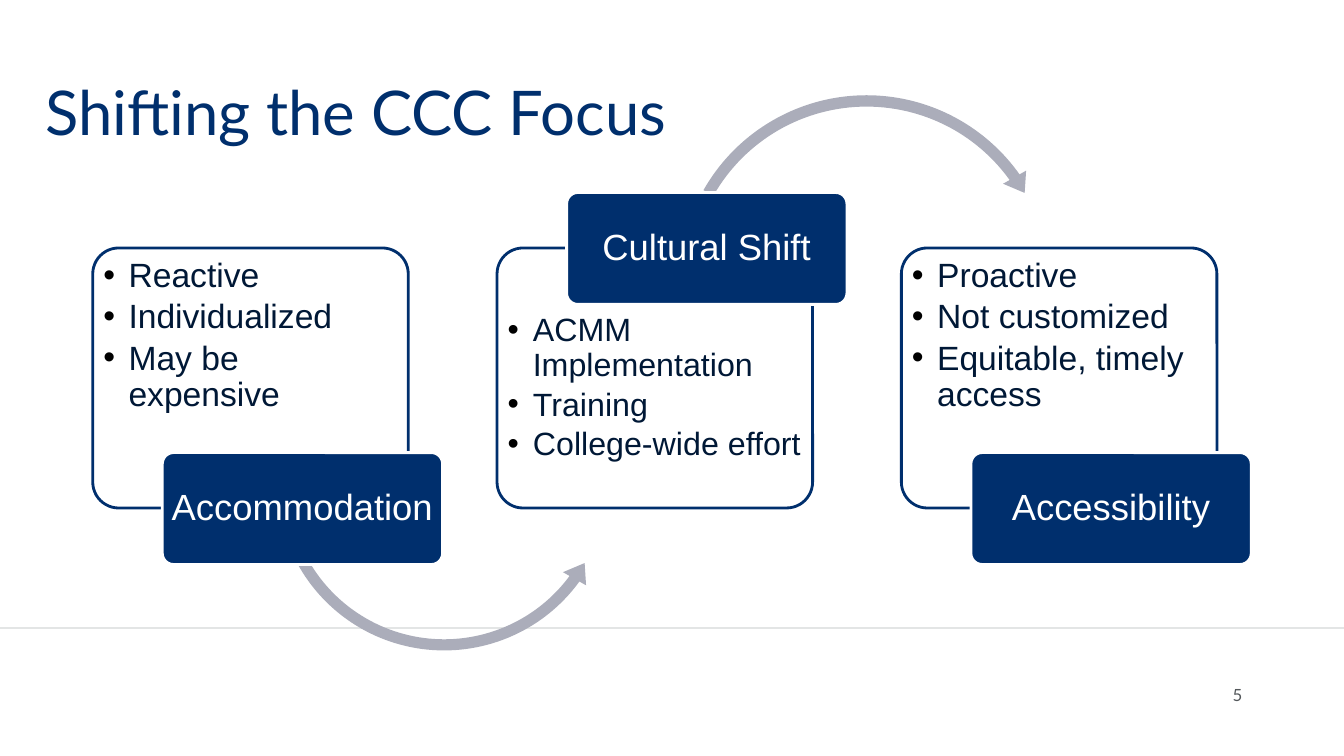
from dataclasses import dataclass

from lxml.etree import SubElement
from pptx import Presentation
from pptx.dml.color import RGBColor
from pptx.enum.shapes import MSO_CONNECTOR as Connector, MSO_SHAPE as Shape
from pptx.enum.text import MSO_ANCHOR as Anchor, PP_ALIGN as Align
from pptx.oxml.ns import qn
from pptx.util import Pt

PX = 9144
NAVY, INK, WHITE, ARROW_GRAY = "002F6D", "001836", "FFFFFF", "ABADBA"
CARD_LEFT, CARD_TOP, CARD_PITCH = 92, 246, 401
CARD_WIDTH, CARD_HEIGHT = 313, 258
LABEL_OFFSET, LABEL_WIDTH, LABEL_HEIGHT = 69, 278, 111
BULLET_INDENT = 25


@dataclass(frozen=True)
class Arrow:
    """A curved arrow leading from one stage to the next."""
    kind: Shape
    left: int
    top: int
    size: int
    adjustments: tuple[float, ...]


@dataclass(frozen=True)
class Stage:
    """A card of bullets with its overlapping label and outgoing arrow."""
    label: str
    bullets: tuple[str, ...]
    size: int
    text_top: int
    label_top: int
    arrow: Arrow | None = None


STAGES = (
    Stage("Accommodation", ("Reactive", "Individualized", "May be expensive"), 24, 3, 449,
          Arrow(Shape.LEFT_CIRCULAR_ARROW, 267, 306, 347,
                (0.032, 3.97, 21.726, 90.245, 0.038))),
    Stage("Cultural Shift", ("ACMM Implementation", "Training", "College-wide effort"), 23, 58, 191,
          Arrow(Shape.CIRCULAR_ARROW, 666, 87, 387,
                (0.029, 3.533, 194.712, 125.755, 0.034))),
    Stage("Accessibility", ("Proactive", "Not customized", "Equitable, timely access"), 24, 3, 449),
)


def color(value: str) -> RGBColor:
    """Turn a hex string into a colour."""
    return RGBColor.from_string(value)


def add_shape(slide, kind: Shape, box: tuple[int, int, int, int], fill: str, line: str | None = None):
    """Add a flat filled shape with an optional outline."""
    shape = slide.shapes.add_shape(kind, *(length * PX for length in box))
    shape.shadow.inherit = False
    shape.fill.solid()
    shape.fill.fore_color.rgb = color(fill)
    if line:
        shape.line.color.rgb = color(line)
        shape.line.width = Pt(2)
    else:
        shape.line.fill.background()
    return shape


def set_frame(shape, margins: tuple[int, int, int, int], anchor: Anchor):
    """Set the margins, wrapping and anchor of a text frame."""
    frame = shape.text_frame
    frame.word_wrap = True
    frame.vertical_anchor = anchor
    frame.margin_left, frame.margin_top, frame.margin_right, frame.margin_bottom = (
        length * PX for length in margins)
    return frame


def write(paragraph, text: str, size: int, ink: str, font: str, align: Align, spacing: float = 0.9) -> None:
    """Write one run into a paragraph."""
    paragraph.alignment = align
    paragraph.line_spacing = spacing
    run = paragraph.add_run()
    run.text = text
    run.font.size = Pt(size)
    run.font.name = font
    run.font.color.rgb = color(ink)


def add_bullet(paragraph) -> None:
    """Give a paragraph a hanging black bullet."""
    properties = paragraph._p.get_or_add_pPr()
    properties.set("marL", str(BULLET_INDENT * PX))
    properties.set("indent", str(-BULLET_INDENT * PX))
    SubElement(SubElement(properties, qn("a:buClr")), qn("a:srgbClr"), val="000000")
    SubElement(properties, qn("a:buFont"), typeface="Arial")
    SubElement(properties, qn("a:buChar"), char="•")


def add_card(slide, stage: Stage, left: int) -> None:
    """Add the rounded card with its bullets."""
    card = add_shape(slide, Shape.ROUNDED_RECTANGLE, (left, CARD_TOP, CARD_WIDTH, CARD_HEIGHT), WHITE, NAVY)
    card.adjustments[0] = 0.1
    fill_color = card._element.spPr.find(qn("a:solidFill")).find(qn("a:srgbClr"))
    SubElement(fill_color, qn("a:alpha"), val="90000")
    frame = set_frame(card, (3, stage.text_top, 3, 3), Anchor.TOP)
    for index, text in enumerate(stage.bullets):
        paragraph = frame.add_paragraph() if index else frame.paragraphs[0]
        add_bullet(paragraph)
        paragraph.space_after = Pt(stage.size * 0.15)
        write(paragraph, text, stage.size, INK, "Arial", Align.LEFT)


def add_arrow(slide, arrow: Arrow) -> None:
    """Add a curved arrow."""
    shape = add_shape(slide, arrow.kind, (arrow.left, arrow.top, arrow.size, arrow.size), ARROW_GRAY)
    for index, value in enumerate(arrow.adjustments):
        shape.adjustments[index] = value


def add_label(slide, stage: Stage, left: int) -> None:
    """Add the navy label that overlaps a card."""
    label = add_shape(slide, Shape.ROUNDED_RECTANGLE,
                      (left, stage.label_top, LABEL_WIDTH, LABEL_HEIGHT), NAVY, WHITE)
    label.adjustments[0] = 0.1
    frame = set_frame(label, (5, 4, 5, 4), Anchor.MIDDLE)
    write(frame.paragraphs[0], stage.label, 26, WHITE, "Arial", Align.CENTER)


def add_text(slide, box: tuple[int, int, int, int], text: str, size: int, ink: str,
             align: Align, spacing: float) -> None:
    """Add a one-line Lato text box."""
    text_box = slide.shapes.add_textbox(*(length * PX for length in box))
    frame = set_frame(text_box, (10, 5, 10, 5), Anchor.MIDDLE)
    write(frame.paragraphs[0], text, size, ink, "Lato", align, spacing)


def add_footer_rule(slide) -> None:
    """Add the thin line above the footer."""
    rule = slide.shapes.add_connector(Connector.STRAIGHT, 0, 623 * PX, 1333 * PX, 623 * PX)
    rule.line.color.rgb = color("E3E5E5")
    rule.line.width = Pt(1)
    SubElement(rule._element.spPr, qn("a:effectLst"))


def main() -> None:
    """Build and save the slide."""
    presentation = Presentation()
    presentation.slide_width = 1333 * PX
    presentation.slide_height = 750 * PX
    slide = presentation.slides.add_slide(presentation.slide_layouts[6])
    add_footer_rule(slide)
    add_text(slide, (35, 42, 1150, 145), "Shifting the CCC Focus", 44, NAVY, Align.LEFT, 0.9)
    add_text(slide, (942, 669, 300, 40), "5", 12, "53575A", Align.RIGHT, 1.0)
    for index, stage in enumerate(STAGES):
        left = CARD_LEFT + index * CARD_PITCH
        add_card(slide, stage, left)
        if stage.arrow:
            add_arrow(slide, stage.arrow)
        add_label(slide, stage, left + LABEL_OFFSET)
    presentation.save("out.pptx")


if __name__ == "__main__":
    main()
